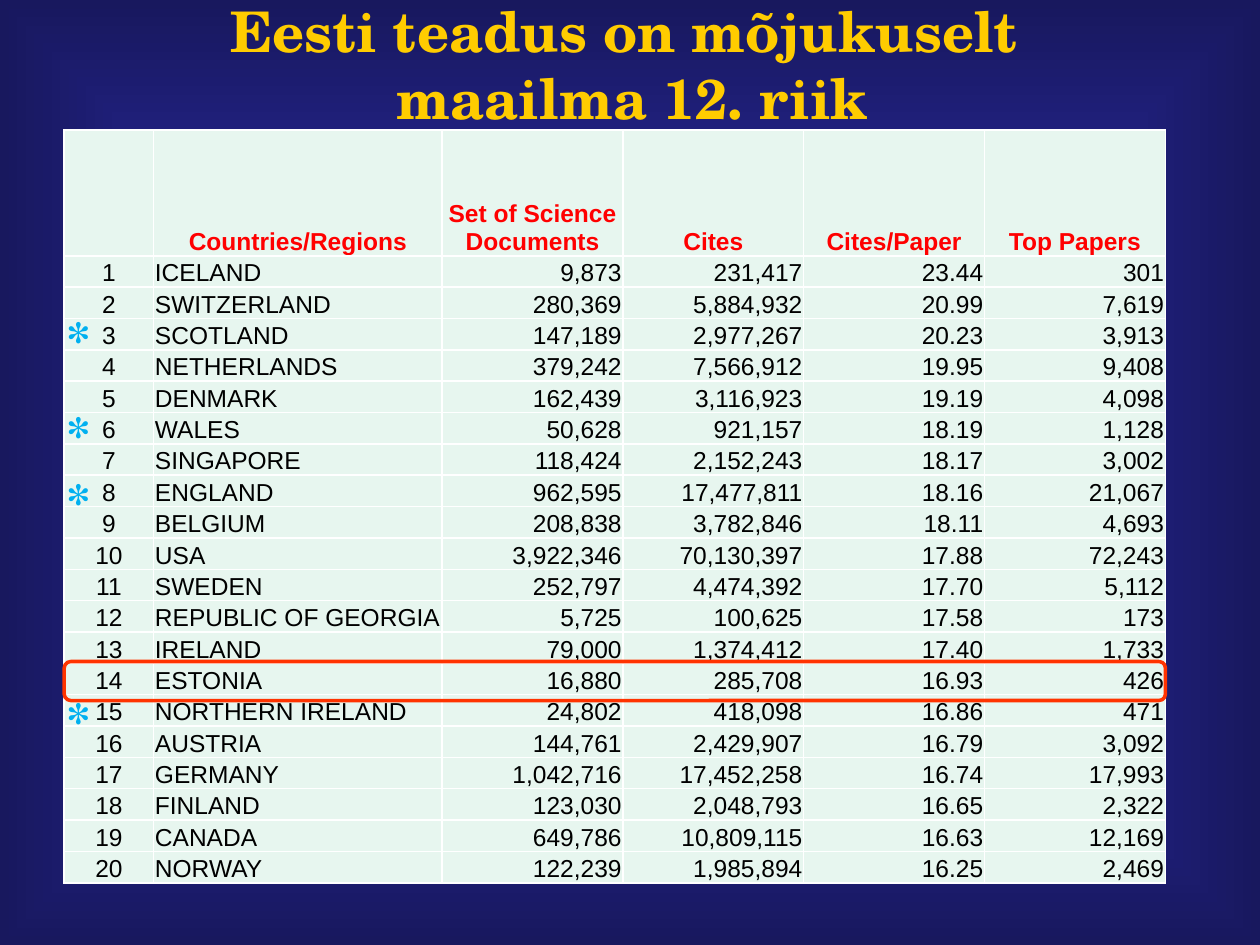
from lxml import etree
from pptx import Presentation
from pptx import util as u
from pptx.dml.color import RGBColor
from pptx.enum import shapes, text
from pptx.oxml.ns import qn

HEADS = ["", "Countries/Regions", "Set of Science Documents", "Cites",
         "Cites/Paper", "Top Papers"]
ROWS = """ICELAND|9,873|231,417|23.44|301
SWITZERLAND|280,369|5,884,932|20.99|7,619
SCOTLAND|147,189|2,977,267|20.23|3,913
NETHERLANDS|379,242|7,566,912|19.95|9,408
DENMARK|162,439|3,116,923|19.19|4,098
WALES|50,628|921,157|18.19|1,128
SINGAPORE|118,424|2,152,243|18.17|3,002
ENGLAND|962,595|17,477,811|18.16|21,067
BELGIUM|208,838|3,782,846|18.11|4,693
USA|3,922,346|70,130,397|17.88|72,243
SWEDEN|252,797|4,474,392|17.70|5,112
REPUBLIC OF GEORGIA|5,725|100,625|17.58|173
IRELAND|79,000|1,374,412|17.40|1,733
ESTONIA|16,880|285,708|16.93|426
NORTHERN IRELAND|24,802|418,098|16.86|471
AUSTRIA|144,761|2,429,907|16.79|3,092
GERMANY|1,042,716|17,452,258|16.74|17,993
FINLAND|123,030|2,048,793|16.65|2,322
CANADA|649,786|10,809,115|16.63|12,169
NORWAY|122,239|1,985,894|16.25|2,469"""
LEFT, TOP, WIDTH, HEIGHT = 0.51, 1.03, 8.74, 5.98
HEAD_HIGH = 1
STAR_TOPS = [2.41, 3.16, 3.69, 5.43]
ALIGN = text.PP_ALIGN


def color(code):
    return RGBColor.from_string(code)


class Deck:
    serif, sans = "TeX Gyre Schola", "Arial"
    gold, red, black, sky = "FFCC00", "FF0000", "000000", "00B0F0"
    mint, white, frame = "E7F6EF", "FFFFFF", "FF3300"
    blue, navy = "3333CC", "18185E"

    def __init__(self):
        self.show = Presentation()
        self.show.slide_width, self.show.slide_height = u.Inches(10), u.Inches(7.5)
        self.slide = self.show.slides.add_slide(self.show.slide_layouts[5])

    def backdrop(self):
        """Fill the background with a gradient running in from the edges."""
        fill = self.slide.background.fill
        fill.gradient()
        for stop, code in zip(fill.gradient_stops, (self.blue, self.navy)):
            stop.color.rgb = color(code)
        grad = self.slide.element.find(".//" + qn("a:gradFill"))
        line = grad.find(qn("a:lin"))
        shade = etree.Element(qn("a:path"), path="shape")
        etree.SubElement(shade, qn("a:fillToRect"),
                         l="50000", t="50000", r="50000", b="50000")
        grad.replace(line, shade)

    def style(self, para, face, size, code, bold, align):
        para.alignment = align
        font = para.font
        font.name, font.size, font.bold = face, u.Pt(size), bold
        font.color.rgb = color(code)

    def title(self, words, left, top, width, height):
        box = self.slide.shapes.title
        box.left, box.top = u.Inches(left), u.Inches(top)
        box.width, box.height = u.Inches(width), u.Inches(height)
        frame = box.text_frame
        frame.text = words
        frame.auto_size = text.MSO_AUTO_SIZE.NONE
        frame.vertical_anchor = text.MSO_ANCHOR.MIDDLE
        self.style(frame.paragraphs[0], self.serif, 32, self.gold, True, ALIGN.CENTER)

    def border(self, cell):
        props = cell._tc.get_or_add_tcPr()
        for side in ("lnL", "lnR", "lnT", "lnB"):
            line = etree.SubElement(props, qn("a:" + side), w=str(u.Pt(1)))
            solid = etree.SubElement(line, qn("a:solidFill"))
            etree.SubElement(solid, qn("a:srgbClr"), val=self.white)

    def cell(self, cell, words, head, align):
        self.border(cell)
        cell.fill.solid()
        cell.fill.fore_color.rgb = color(self.mint)
        cell.vertical_anchor = text.MSO_ANCHOR.BOTTOM
        cell.margin_left = cell.margin_right = cell.margin_top = u.Inches(0.01)
        cell.margin_bottom = 0
        cell.text = words
        self.style(cell.text_frame.paragraphs[0], self.sans, 14,
                   self.red if head else self.black, head, align)

    def table(self, rows, widths, heights, aligns):
        grid = self.slide.shapes.add_table(
            len(rows), len(widths), u.Inches(LEFT), u.Inches(TOP),
            u.Inches(WIDTH), u.Inches(HEIGHT)).table
        for col, width in zip(grid.columns, widths):
            col.width = u.Inches(width)
        for r, (row, height) in enumerate(zip(rows, heights)):
            grid.rows[r].height = u.Inches(height)
            for c, words in enumerate(row):
                align = aligns[c] if r else ALIGN.CENTER
                self.cell(grid.cell(r, c), words, r == 0, align)

    def outline(self, left, top, width, height):
        box = self.slide.shapes.add_shape(
            shapes.MSO_SHAPE.ROUNDED_RECTANGLE, u.Inches(left), u.Inches(top),
            u.Inches(width), u.Inches(height))
        box.shadow.inherit = False
        box.fill.background()
        box.line.color.rgb = color(self.frame)
        box.line.width = u.Pt(2)

    def star(self, left, top):
        frame = self.slide.shapes.add_textbox(
            u.Inches(left), u.Inches(top), u.Inches(0.39), u.Inches(0.57)).text_frame
        frame.word_wrap = False
        frame.auto_size = text.MSO_AUTO_SIZE.SHAPE_TO_FIT_TEXT
        frame.text = "*"
        self.style(frame.paragraphs[0], self.serif, 28, self.sky, True, ALIGN.LEFT)


def main():
    deck = Deck()
    deck.backdrop()
    deck.title("Eesti teadus on mõjukuselt \vmaailma 12. riik", 0.63, 0.13, 8.78, 0.75)

    lands = [[str(rank), *line.split("|")]
             for rank, line in enumerate(ROWS.splitlines(), 1)]
    first = [0.71, 2.29]
    widths = first + [(WIDTH - sum(first)) / 4] * 4
    heights = [HEAD_HIGH] + [(HEIGHT - HEAD_HIGH) / len(lands)] * len(lands)
    aligns = [ALIGN.CENTER, ALIGN.LEFT] + [ALIGN.RIGHT] * 4
    deck.table([HEADS] + lands, widths, heights, aligns)

    deck.outline(LEFT, 5.25, WIDTH, 0.31)
    for top in STAR_TOPS:
        deck.star(0.43, top)
    deck.show.save("out.pptx")


if __name__ == "__main__":
    main()
